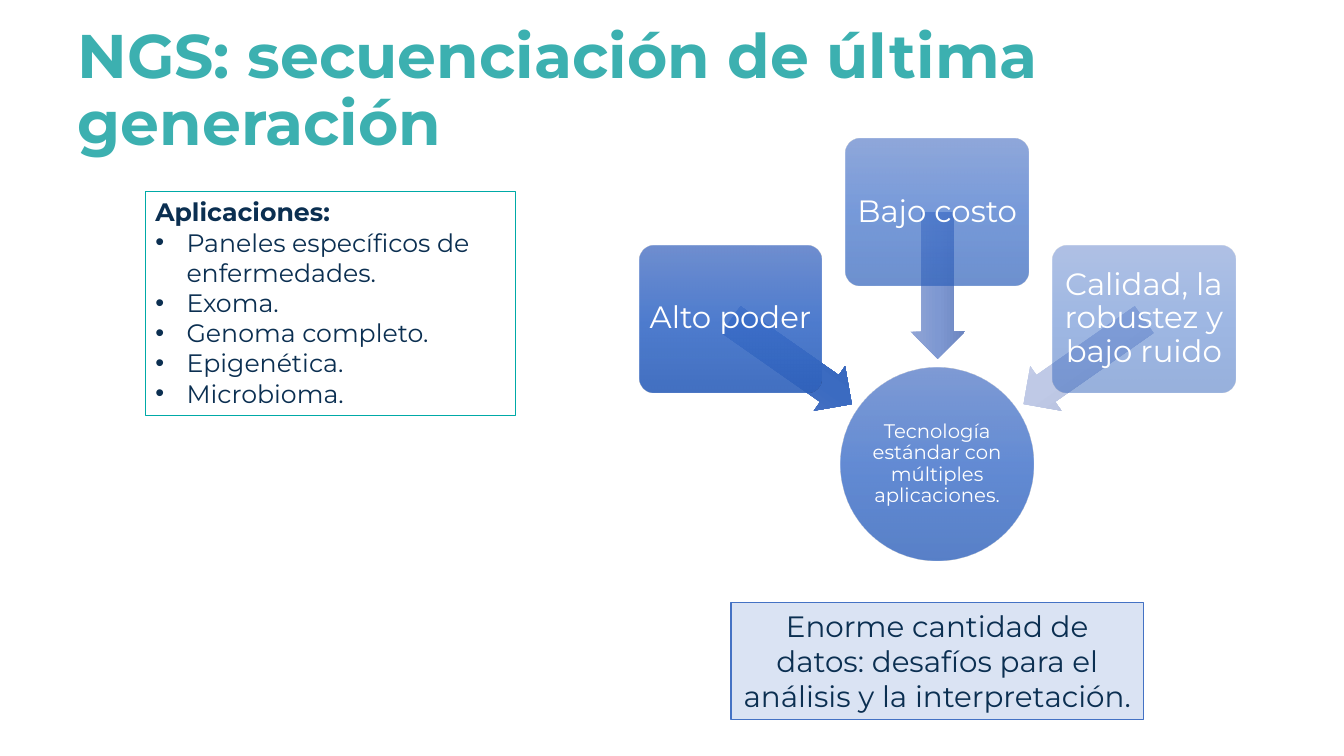
"""Build the slide on next-generation sequencing and its applications."""
from lxml.etree import SubElement
from pptx import Presentation
from pptx.dml.color import RGBColor
from pptx.enum.shapes import MSO_SHAPE
from pptx.enum.text import MSO_ANCHOR, MSO_AUTO_SIZE, PP_ALIGN
from pptx.oxml.ns import qn
from pptx.util import Emu, Pt

SCALE = 9144
FONT = "Montserrat"
COLORS = {
    "title": "3CB0B0",
    "ink": "0B2F51",
    "white": "FFFFFF",
    "teal": "00AAA7",
    "blue": "4472C4",
    "pale": "DAE3F3",
}
GLASS = ("6183CB", "3E70CA", "3062BB")
CARDS = (
    ("Alto poder", 244, 332, 90, ("5E7EC4", "3B6BC1", "2F5EB1")),
    ("Bajo costo ", 138, 256, 70, ("91A5D5", "7E98D2", "6C85BF")),
    ("Calidad, la robustez y bajo ruido ", 244, 332, 50, ("CAD2E9", "BFC9E6", "A7B1CF")),
)
APPLICATIONS = (
    "Paneles específicos de enfermedades.",
    "Exoma.",
    "Genoma completo.",
    "Epigenética.",
    "Microbioma.",
)


def px(length):
    """Turn px into EMU."""
    return Emu(length * SCALE)


def color(name):
    """Look up a named colour."""
    return RGBColor.from_string(COLORS[name])


def place(shape, left, top, width, height):
    """Move and size a shape."""
    shape.left, shape.top = px(left), px(top)
    shape.width, shape.height = px(width), px(height)


def paint(shape, fill, line):
    """Give a shape a flat fill and a thin outline."""
    shape.fill.solid()
    shape.fill.fore_color.rgb = color(fill)
    shape.line.color.rgb = color(line)
    shape.line.width = Pt(1)


def paint_gradient(shape, stops, opacity=100):
    """Give a shape a top-to-bottom gradient and no outline."""
    shape.line.fill.background()
    shape.fill.gradient()
    shape.fill.gradient_angle = 270
    stop_list = shape.element.spPr.find(qn("a:gradFill")).find(qn("a:gsLst"))
    for stop in list(stop_list):
        stop_list.remove(stop)
    for index, value in enumerate(stops):
        stop = SubElement(stop_list, qn("a:gs"), pos=str(index * 50000))
        tint = SubElement(stop, qn("a:srgbClr"), val=value)
        if opacity < 100:
            SubElement(tint, qn("a:alpha"), val=str(opacity * 1000))


def set_frame(shape, anchor=MSO_ANCHOR.TOP, inset=None):
    """Prepare the text frame of a shape."""
    frame = shape.text_frame
    frame.word_wrap = True
    frame.auto_size = MSO_AUTO_SIZE.NONE
    frame.vertical_anchor = anchor
    if inset is not None:
        frame.margin_left = frame.margin_right = px(inset)
        frame.margin_top = frame.margin_bottom = px(inset)
    return frame


def write(para, text, size, ink, bold=False, align=PP_ALIGN.CENTER, spacing=1.0):
    """Write formatted text into a paragraph."""
    para.alignment = align
    para.line_spacing = spacing
    para.space_before = Pt(0)
    span = para.add_run()
    span.text = text
    span.font.name = FONT
    span.font.size = Pt(size)
    span.font.bold = bold
    span.font.color.rgb = color(ink)


def set_bullet(para, bullet=None, indent=0):
    """Set or clear the bullet and hanging indent of a paragraph."""
    properties = para._p.get_or_add_pPr()
    properties.set("marL", str(px(indent)))
    properties.set("indent", str(-px(indent)))
    if bullet:
        SubElement(properties, qn("a:buFont"), typeface="Arial")
        SubElement(properties, qn("a:buChar"), char=bullet)
    else:
        SubElement(properties, qn("a:buNone"))


def add_shape(page, kind, left, top, width, height):
    """Add a preset shape without a shadow."""
    shape = page.shapes.add_shape(kind, px(left), px(top), px(width), px(height))
    shape.shadow.inherit = False
    return shape


def add_arrow(page, left, top, rotation, stops):
    """Add a block arrow that points to the circle."""
    arrow = add_shape(page, MSO_SHAPE.LEFT_ARROW, left, top, 146, 54)
    arrow.rotation = rotation
    arrow.adjustments[0] = 0.6
    arrow.adjustments[1] = 0.5
    paint_gradient(arrow, stops)


def add_card(page, text, left, top, opacity):
    """Add a translucent rounded card."""
    card = add_shape(page, MSO_SHAPE.ROUNDED_RECTANGLE, left, top, 181, 145)
    card.adjustments[0] = 0.1
    paint_gradient(card, GLASS, opacity)
    frame = set_frame(card, MSO_ANCHOR.MIDDLE, 5)
    write(frame.paragraphs[0], text, 22, "white", spacing=0.9)


def add_circle(page, text):
    """Add the circle where the arrows meet."""
    circle = add_shape(page, MSO_SHAPE.OVAL, 834, 365, 191, 191)
    paint_gradient(circle, GLASS, 80)
    frame = set_frame(circle, MSO_ANCHOR.MIDDLE, 1)
    write(frame.paragraphs[0], text, 14, "white", spacing=0.9)


def fill_title(title, text):
    """Place and write the title."""
    place(title, 67, 53, 1100, 77)
    frame = set_frame(title, MSO_ANCHOR.MIDDLE)
    write(frame.paragraphs[0], text, 44, "title", bold=True, align=PP_ALIGN.LEFT, spacing=0.9)


def fill_list(body, heading, items):
    """Place and write the framed list with its heading."""
    place(body, 144, 190, 367, 222)
    paint(body, "white", "teal")
    frame = set_frame(body)
    first = frame.paragraphs[0]
    set_bullet(first)
    write(first, heading, 18, "ink", bold=True, align=PP_ALIGN.LEFT)
    for item in items:
        para = frame.add_paragraph()
        set_bullet(para, "•", 31)
        write(para, item, 18, "ink", align=PP_ALIGN.LEFT)


def add_note(page, text):
    """Add the framed conclusion."""
    note = add_shape(page, MSO_SHAPE.RECTANGLE, 725, 598, 409, 116)
    paint(note, "pale", "blue")
    write(set_frame(note).paragraphs[0], text, 21, "ink")


def main():
    """Build and save the deck."""
    deck = Presentation()
    deck.slide_width, deck.slide_height = px(1333), px(750)
    page = deck.slides.add_slide(deck.slide_layouts[1])
    fill_title(page.shapes.title, "NGS: secuenciación de última generación")
    fill_list(page.placeholders[1], "Aplicaciones:", APPLICATIONS)
    add_circle(page, "Tecnología estándar con múltiples aplicaciones.")
    for index, (text, card_top, arrow_top, opacity, stops) in enumerate(CARDS):
        add_arrow(page, 712 + 145 * index, arrow_top, 215 + 55 * index, stops)
        add_card(page, text, 634 + 205 * index, card_top, opacity)
    add_note(page, "Enorme cantidad de datos: desafíos para el análisis y la interpretación. ")
    deck.save("out.pptx")


if __name__ == "__main__":
    main()
